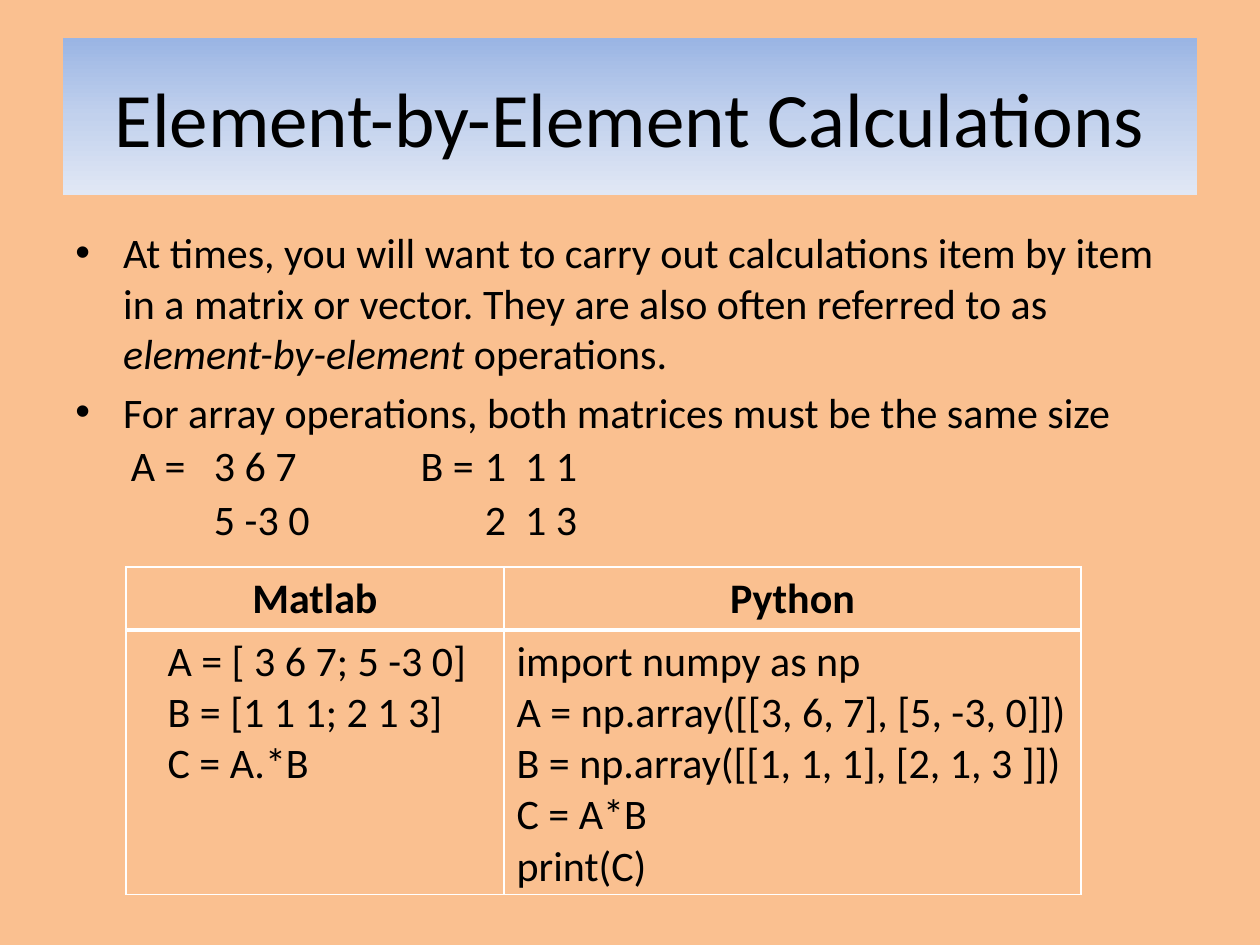
import copy
from dataclasses import dataclass

import lxml.etree
import pptx
import pptx.dml.color
import pptx.enum.text
import pptx.oxml.ns
import pptx.util

Inches = pptx.util.Inches
Pt = pptx.util.Pt
qn = pptx.oxml.ns.qn
CENTER = pptx.enum.text.PP_ALIGN.CENTER


@dataclass(frozen=True)
class Theme:
    font: str = "Calibri"
    title_size: int = 44
    body_size: int = 24
    ink: str = "000000"
    background: str = "FAC090"
    border: str = "FFFFFF"
    banner: tuple = ("9AB5E4", "C2D1ED", "E1E8F5")


def rgb(value):
    return pptx.dml.color.RGBColor.from_string(value)


def add_text(paragraph, text, *, theme, size=None, bold=False, italic=False):
    run = paragraph.add_run()
    run.text = text
    run.font.name = theme.font
    run.font.size = Pt(size or theme.body_size)
    run.font.bold = bold
    run.font.italic = italic
    run.font.color.rgb = rgb(theme.ink)


def next_paragraph(frame, first):
    return frame.paragraphs[0] if first else frame.add_paragraph()


class SlideBuilder:
    def __init__(self, presentation, theme):
        self.theme = theme
        self.slide = presentation.slides.add_slide(presentation.slide_layouts[5])
        self.slide.background.fill.solid()
        self.slide.background.fill.fore_color.rgb = rgb(theme.background)

    def title(self, text, left, top, width, height):
        banner = self.slide.shapes.title
        banner.left, banner.top = Inches(left), Inches(top)
        banner.width, banner.height = Inches(width), Inches(height)
        banner.fill.gradient()
        banner.fill.gradient_angle = 270
        # A third gradient stop goes halfway between the default two
        stop_list = banner.fill._fill._gradFill.find(qn("a:gsLst"))
        stop_list.insert(1, copy.deepcopy(stop_list[0]))
        for index, (stop, color) in enumerate(
                zip(banner.fill.gradient_stops, self.theme.banner)):
            stop.position = index / 2
            stop.color.rgb = rgb(color)
        banner.text_frame.vertical_anchor = pptx.enum.text.MSO_ANCHOR.MIDDLE
        heading = banner.text_frame.paragraphs[0]
        heading.alignment = CENTER
        add_text(heading, text, theme=self.theme, size=self.theme.title_size)

    def body(self, bullets, matrix_rows, tab_stops, left, top, width, height):
        frame = self.slide.shapes.add_textbox(
            Inches(left), Inches(top), Inches(width), Inches(height)).text_frame
        frame.word_wrap = True
        for index, pieces in enumerate(bullets):
            paragraph = next_paragraph(frame, index == 0)
            paragraph.space_before = Pt(self.theme.body_size * 0.2)
            properties = paragraph._p.get_or_add_pPr()
            properties.set("marL", str(Inches(0.38)))
            properties.set("indent", str(Inches(-0.38)))
            lxml.etree.SubElement(properties, qn("a:buFont"), typeface="Arial")
            lxml.etree.SubElement(properties, qn("a:buChar"), char="•")
            for text, italic in pieces:
                add_text(paragraph, text, theme=self.theme, italic=italic)
        for text in matrix_rows:
            paragraph = frame.add_paragraph()
            paragraph.space_before = Pt(self.theme.body_size * 0.2)
            paragraph.line_spacing = 0.9
            tabs = lxml.etree.SubElement(
                paragraph._p.get_or_add_pPr(), qn("a:tabLst"))
            for stop in tab_stops:
                lxml.etree.SubElement(
                    tabs, qn("a:tab"), pos=str(Inches(stop)), algn="l")
            add_text(paragraph, text, theme=self.theme)

    def table(self, headers, listings, listing_margins, left, top, widths, heights):
        grid = self.slide.shapes.add_table(
            2, len(headers), Inches(left), Inches(top),
            Inches(sum(widths)), Inches(sum(heights))).table
        for column, width in zip(grid.columns, widths):
            column.width = Inches(width)
        for row, height in zip(grid.rows, heights):
            row.height = Inches(height)
        for index, (header, listing) in enumerate(zip(headers, listings)):
            self.cell(grid.cell(0, index), [header], header=True)
            self.cell(grid.cell(1, index), listing, margin=listing_margins[index])

    def cell(self, cell, lines, header=False, margin=0.1):
        cell.margin_left = Inches(margin)
        cell.fill.solid()
        cell.fill.fore_color.rgb = rgb(self.theme.background)
        # The rule between the header and the code is heavier
        edges = {"lnL": 1, "lnR": 1,
                 "lnT": 1 if header else 3, "lnB": 3 if header else 1}
        properties = cell._tc.get_or_add_tcPr()
        for index, (edge, points) in enumerate(edges.items()):
            line = lxml.etree.Element(qn(f"a:{edge}"), w=str(Pt(points)))
            fill = lxml.etree.SubElement(line, qn("a:solidFill"))
            lxml.etree.SubElement(fill, qn("a:srgbClr"), val=self.theme.border)
            properties.insert(index, line)
        for index, text in enumerate(lines):
            paragraph = next_paragraph(cell.text_frame, index == 0)
            if header:
                paragraph.alignment = CENTER
            add_text(paragraph, text, theme=self.theme, bold=header)


def main():
    presentation = pptx.Presentation()
    presentation.slide_width = Inches(10)
    presentation.slide_height = Inches(7.5)
    builder = SlideBuilder(presentation, Theme())

    # Title banner
    builder.title("Element-by-Element Calculations", 0.5, 0.3, 9, 1.25)

    # Explanation and the two example matrices
    builder.body(
        bullets=[
            [("At times, you will want to carry out calculations item by item "
              "in a matrix or vector. They are also often referred to as ", False),
             ("element-by-element", True),
             (" operations.", False)],
            [("For array operations, both matrices must be the same size", False)],
        ],
        matrix_rows=["\tA =\t3 6 7\tB =\t1  1 1", "\t\t5 -3 0\t\t2  1 3"],
        tab_stops=[0.44, 1.1, 2.74, 3.25],
        left=0.5, top=1.75, width=9, height=4.95)

    # The same product in both languages
    builder.table(
        headers=["Matlab", "Python"],
        listings=[
            ["A = [ 3 6 7; 5 -3 0]", "B = [1 1 1; 2 1 3]", "C = A.*B"],
            ["import numpy as np",
             "A = np.array([[3, 6, 7], [5, -3, 0]])",
             "B = np.array([[1, 1, 1], [2, 1, 3 ]])",
             "C = A*B",
             "print(C)"],
        ],
        listing_margins=[0.33, 0.1],
        left=1, top=4.5, widths=[3, 4.58], heights=[0.46, 2.04])

    presentation.save("out.pptx")


if __name__ == "__main__":
    main()
